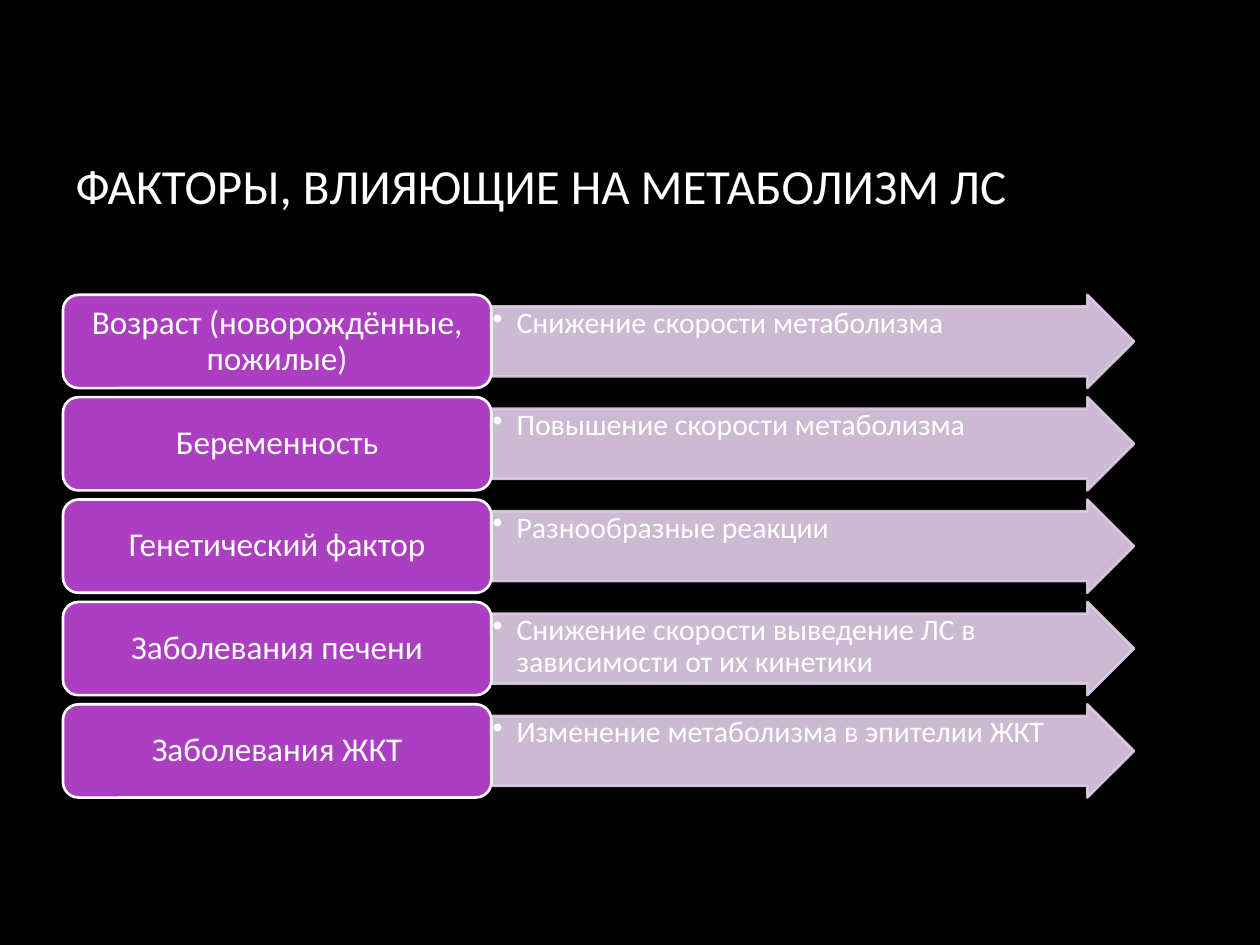
from lxml.etree import SubElement
from pptx import Presentation
from pptx.dml.color import RGBColor
from pptx.enum.shapes import MSO_SHAPE
from pptx.enum.text import MSO_ANCHOR, PP_ALIGN
from pptx.oxml.ns import qn
from pptx.util import Inches, Pt

COLORS = {
    "background": "000000",
    "text": "FFFFFF",
    "factor": "AC3EC1",
    "effect": "E3CEE9",
}

FACTORS = [
    ("Возраст (новорождённые, пожилые)", "Снижение скорости метаболизма"),
    ("Беременность", "Повышение скорости метаболизма"),
    ("Генетический фактор", "Разнообразные реакции"),
    ("Заболевания печени", "Снижение скорости выведение ЛС в зависимости от их кинетики"),
    ("Заболевания ЖКТ", "Изменение метаболизма в эпителии ЖКТ"),
]

FIRST_TOP, LAST_TOP, ROW_HEIGHT = 2.34, 5.59, 0.74
ROW_PITCH = (LAST_TOP - FIRST_TOP) / (len(FACTORS) - 1)
FACTOR_LEFT, FACTOR_WIDTH = 0.5, 3.4
EFFECT_LEFT, EFFECT_WIDTH = FACTOR_LEFT + FACTOR_WIDTH, 5.1


class FactorSlide:
    font_name = "Calibri"

    def __init__(self, slide):
        self.slide = slide
        background = slide.background.fill
        background.solid()
        background.fore_color.rgb = self.color("background")

    def color(self, name):
        return RGBColor.from_string(COLORS[name])

    def style_text(self, paragraph, size, align):
        paragraph.alignment = align
        paragraph.font.name = self.font_name
        paragraph.font.size = Pt(size)
        paragraph.font.color.rgb = self.color("text")

    def title(self, text, left, top, width, height):
        heading = self.slide.shapes.title
        heading.left, heading.top = Inches(left), Inches(top)
        heading.width, heading.height = Inches(width), Inches(height)
        frame = heading.text_frame
        frame.text = text
        frame.vertical_anchor = MSO_ANCHOR.MIDDLE
        self.style_text(frame.paragraphs[0], 28, PP_ALIGN.LEFT)

    def block(self, kind, text, left, top, width, fill, line, margins, anchor):
        block = self.slide.shapes.add_shape(
            kind, Inches(left), Inches(top), Inches(width), Inches(ROW_HEIGHT))
        block.shadow.inherit = False
        block.fill.solid()
        block.fill.fore_color.rgb = self.color(fill)
        block.line.color.rgb = self.color(line)
        block.line.width = Pt(1.5)
        frame = block.text_frame
        frame.text = text
        frame.word_wrap = True
        frame.vertical_anchor = anchor
        frame.margin_left, frame.margin_top, frame.margin_right, frame.margin_bottom = map(
            Inches, margins)
        frame.paragraphs[0].line_spacing = 0.9
        return block

    def factor(self, text, top):
        box = self.block(MSO_SHAPE.ROUNDED_RECTANGLE, text, FACTOR_LEFT, top, FACTOR_WIDTH,
                         "factor", "text", (0.08, 0.04, 0.08, 0.04), MSO_ANCHOR.MIDDLE)
        self.style_text(box.text_frame.paragraphs[0], 19, PP_ALIGN.CENTER)

    def effect(self, text, top):
        arrow = self.block(MSO_SHAPE.RIGHT_ARROW, text, EFFECT_LEFT, top, EFFECT_WIDTH,
                           "effect", "effect", (0.01, 0.01, 0.2, 0.01), MSO_ANCHOR.TOP)
        arrow.adjustments[0] = 0.75
        arrow.adjustments[1] = 0.5
        for tint in arrow.element.spPr.iter(qn("a:srgbClr")):
            SubElement(tint, qn("a:alpha"), val="90000")
        paragraph = arrow.text_frame.paragraphs[0]
        self.bullet(paragraph, 0.19)
        self.style_text(paragraph, 17, PP_ALIGN.LEFT)

    def bullet(self, paragraph, indent):
        properties = paragraph._p.get_or_add_pPr()
        properties.set("marL", str(Inches(indent)))
        properties.set("indent", str(-Inches(indent)))
        SubElement(properties, qn("a:buChar"), char="•")


def main():
    deck = Presentation()
    deck.slide_width, deck.slide_height = Inches(10), Inches(7.5)
    page = FactorSlide(deck.slides.add_slide(deck.slide_layouts[5]))
    page.title("ФАКТОРЫ, ВЛИЯЮЩИЕ НА МЕТАБОЛИЗМ ЛС", 0.5, 0.67, 8.5, 1.59)
    for row, (factor, effect) in enumerate(FACTORS):
        top = FIRST_TOP + row * ROW_PITCH
        page.effect(effect, top)
        page.factor(factor, top)
    deck.save("out.pptx")


if __name__ == "__main__":
    main()
